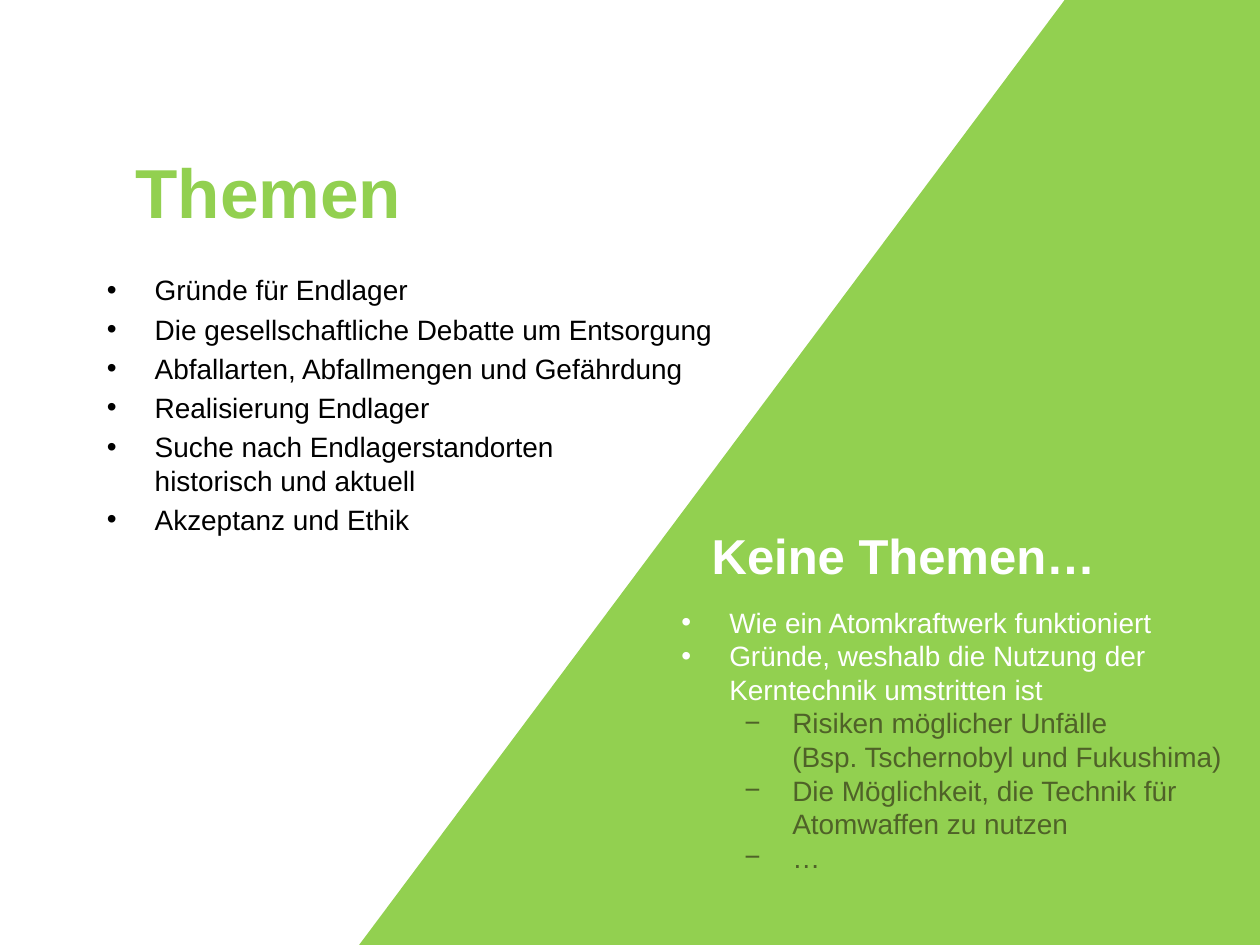
from lxml.etree import SubElement
from pptx import Presentation
from pptx.dml.color import RGBColor
from pptx.enum.text import MSO_ANCHOR as Anchor, MSO_AUTO_SIZE as AutoSize, PP_ALIGN as Align
from pptx.oxml.ns import qn
from pptx.util import Inches, Pt

GREEN, WHITE, BLACK, OLIVE = "92D050", "FFFFFF", "000000", "4F6228"
HANG = 0.38

TOPICS = [
    "Gründe für Endlager",
    "Die gesellschaftliche Debatte um Entsorgung",
    "Abfallarten, Abfallmengen und Gefährdung",
    "Realisierung Endlager",
    "Suche nach Endlagerstandorten\vhistorisch und aktuell",
    "Akzeptanz und Ethik",
]
NON_TOPICS = [
    ("•", "Wie ein Atomkraftwerk funktioniert"),
    ("•", "Gründe, weshalb die Nutzung der Kerntechnik umstritten ist"),
    ("−", "Risiken möglicher Unfälle"),
    (None, "(Bsp. Tschernobyl und Fukushima)"),
    ("−", "Die Möglichkeit, die Technik für Atomwaffen zu nutzen"),
    ("−", "…"),
]


def color(value):
    return RGBColor.from_string(value)


def set_text(p, text, size, fill, bold=False):
    p.text = text
    for r in p.runs:
        for name, value in {"name": "Arial", "size": Pt(size), "bold": bold}.items():
            setattr(r.font, name, value)
        r.font.color.rgb = color(fill)


def set_bullet(p, char, left):
    pPr = p._p.get_or_add_pPr()
    pPr.set("marL", str(Inches(left)))
    pPr.set("indent", str(Inches(-HANG if char else 0)))
    if char:
        SubElement(pPr, qn("a:buFont")).set("typeface", "Arial")
        SubElement(pPr, qn("a:buChar")).set("char", char)
    else:
        SubElement(pPr, qn("a:buNone"))


def add_title(s, text, box):
    sp = s.shapes.title
    for name, value in zip(("left", "top", "width", "height"), box):
        setattr(sp, name, Inches(value))
    tf = sp.text_frame
    tf.auto_size, tf.vertical_anchor = AutoSize.NONE, Anchor.MIDDLE
    p = tf.paragraphs[0]
    set_text(p, text, 39.6, GREEN, bold=True)
    p.alignment = Align.CENTER


def add_heading(s, text, box):
    tf = s.shapes.add_textbox(*map(Inches, box)).text_frame
    tf.word_wrap = False
    tf.auto_size = AutoSize.SHAPE_TO_FIT_TEXT
    set_text(tf.paragraphs[0], text, 28, WHITE, bold=True)


def add_list(s, items, box, space=0):
    tf = s.shapes.add_textbox(*map(Inches, box)).text_frame
    tf.word_wrap, tf.vertical_anchor = True, Anchor.MIDDLE
    for i, (char, text, fill, level) in enumerate(items):
        p = tf.add_paragraph() if i else tf.paragraphs[0]
        set_text(p, text, 16, fill)
        p.level, p.space_before = level, Pt(space)
        set_bullet(p, char, HANG + 0.5 * level)


def add_panel(s, points):
    start, *rest = [(Inches(x), Inches(y)) for x, y in points]
    builder = s.shapes.build_freeform(*start)
    builder.add_line_segments(rest, close=True)
    sp = builder.convert_to_shape()
    sp.shadow.inherit = False
    sp.fill.solid()
    sp.fill.fore_color.rgb = color(GREEN)
    sp.line.fill.background()


def main():
    prs = Presentation()
    prs.slide_width, prs.slide_height = Inches(10), Inches(7.5)
    s = prs.slides.add_slide(prs.slide_layouts[5])
    add_title(s, "Themen", (0.83, 1.17, 2.6, 0.69))
    topics = [("•", text, BLACK, 0) for text in TOPICS]
    add_list(s, topics, (0.75, 2.02, 5.64, 2.38), space=3.2)
    add_panel(s, [(2.85, 7.5), (8.45, 0), (10, 0), (10, 7.5)])
    non_topics = [(char, text, WHITE, 0) if char == "•" else (char, text, OLIVE, 1)
                  for char, text in NON_TOPICS]
    add_list(s, non_topics, (5.31, 4.77, 4.69, 2.2))
    add_heading(s, "Keine Themen…", (5.55, 4.12, 3.39, 0.57))
    prs.save("out.pptx")


if __name__ == "__main__":
    main()
